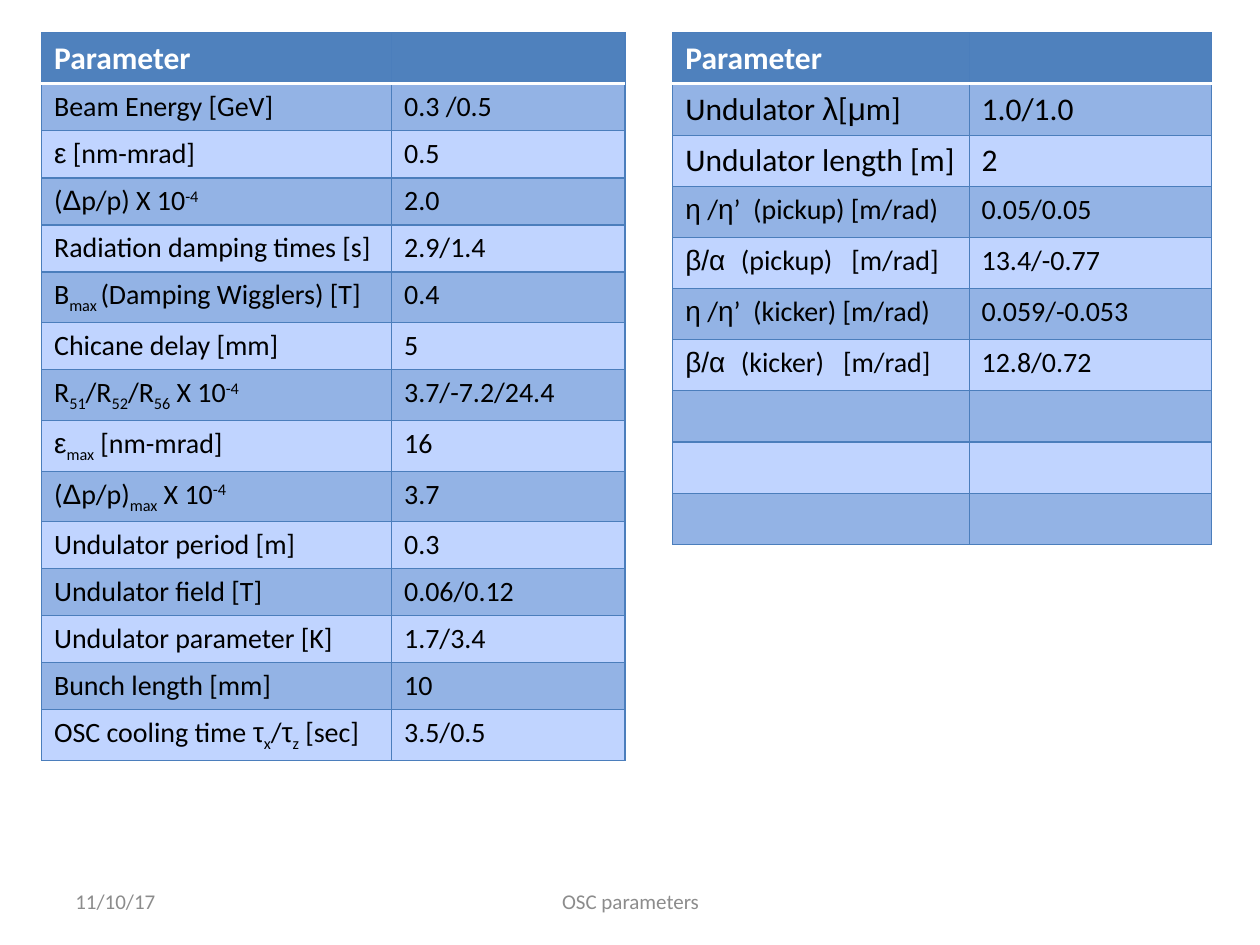
from itertools import groupby

from lxml.etree import SubElement
from pptx import Presentation
from pptx.dml.color import RGBColor
from pptx.enum.text import MSO_ANCHOR as Anchor, PP_ALIGN as Align
from pptx.oxml.ns import qn
from pptx.util import Inches, Pt

WIDTH, HEIGHT = Inches(10), Inches(7.5)
COLORS = {"header": "4F81BD", "dark": "93B3E5", "light": "C0D4FF", "line": "4B7EBC",
          "white": "FFFFFF", "text": "000000", "footer": "8C8C8C"}

# Inline marks toggle a style: _subscript_, ^superscript^, ~Greek face~.
BASELINES = {"_": "-25000", "^": "30000"}
MARKS = "_^~"

BEAM_ROWS = [
    ("Beam Energy [GeV]", "0.3 /0.5"),
    ("~ε~ [nm-mrad]", "0.5"),
    ("(~Δ~p/p) X 10^-4^", "2.0"),
    ("Radiation damping times [s]", "2.9/1.4"),
    ("B_max _(Damping Wigglers) [T]", "0.4"),
    ("Chicane delay [mm]", "5"),
    ("R_51_/R_52_/R_56_ X 10^-4^", "3.7/-7.2/24.4"),
    ("~ε~_max_ [nm-mrad]", "16"),
    ("(~Δ~p/p)_max_ X 10^-4^", "3.7"),
    ("Undulator period [m]", "0.3"),
    ("Undulator field [T]", "0.06/0.12"),
    ("Undulator parameter [K]", "1.7/3.4"),
    ("Bunch length [mm]", "10"),
    ("OSC cooling time ~τ~_x_/~τ~_z_ [sec]", "3.5/0.5"),
]
OPTICS_ROWS = [
    ("Undulator ~λ~[~μ~m]", "1.0/1.0"),
    ("Undulator length [m]", "2"),
    ("~η~ /~η~’  (pickup) [m/rad)", "0.05/0.05"),
    ("~β/α  ~(pickup)   [m/rad]", "13.4/-0.77"),
    ("~η~ /~η~’  (kicker) [m/rad)", "0.059/-0.053"),
    ("~β/α  ~(kicker)   [m/rad]", "12.8/0.72"),
    ("", ""), ("", ""), ("", ""),
]


def share_box(left, top, width, height):
    """Turn percentages of the slide's size into lengths."""
    return tuple(int(part * size / 100) for part, size in
                 zip((left, top, width, height), (WIDTH, HEIGHT) * 2))


def split_marks(text):
    """Split marked text into (mark, words) pieces."""
    mark, styled = "", []
    for letter in text:
        if letter in MARKS:
            mark = "" if mark == letter else letter
        else:
            styled.append((mark, letter))
    for key, group in groupby(styled, key=lambda pair: pair[0]):
        yield key, "".join(letter for _, letter in group)


def write_text(frame, text, size=18, color="text", bold=False, align=Align.LEFT):
    """Write marked text into the first paragraph of a frame."""
    para = frame.paragraphs[0]
    para.alignment = align
    para.font.size = Pt(size)
    for mark, words in split_marks(text):
        span = para.add_run()
        span.text = words
        span.font.name = "Arial" if mark == "~" else "Calibri"
        span.font.size, span.font.bold = Pt(size), bold
        span.font.color.rgb = RGBColor.from_string(COLORS[color])
        if mark in BASELINES:
            span.font._element.set("baseline", BASELINES[mark])


def add_borders(cell, **edges):
    """Draw the four edges of a cell; an edge given as (colour, points) differs."""
    properties = cell._tc.get_or_add_tcPr()
    for side in "LRTB":
        color, points = edges.get(side, ("line", 0.75))
        line = SubElement(properties, qn(f"a:ln{side}"), w=str(Pt(points)))
        fill = SubElement(line, qn("a:solidFill"))
        SubElement(fill, qn("a:srgbClr"), val=COLORS[color])


def add_parameter_table(page, box, first_share, rows, size_of):
    """Place a header and banded rows of parameters in a box."""
    left, top, width, height = box
    count = len(rows) + 1
    table = page.shapes.add_table(count, 2, *box).table
    table.columns[0].width = int(width * first_share)
    table.columns[1].width = width - table.columns[0].width
    for index, texts in enumerate([("Parameter", "")] + rows):
        table.rows[index].height = height // count
        header = index == 0
        edges = {"B": ("white", 2)} if header else {"T": ("white", 2)} if index == 1 else {}
        band = "header" if header else "dark" if index % 2 else "light"
        for column, text in enumerate(texts):
            cell = table.cell(index, column)
            add_borders(cell, **edges)
            cell.fill.solid()
            cell.fill.fore_color.rgb = RGBColor.from_string(COLORS[band])
            write_text(cell.text_frame, text, size=18 if header else size_of(index),
                       color="white" if header else "text", bold=header)


def add_footer(page, box, text, align):
    """Place one grey footer text in a box."""
    frame = page.shapes.add_textbox(*box).text_frame
    frame.word_wrap = True
    frame.vertical_anchor = Anchor.MIDDLE
    write_text(frame, text, size=12, color="footer", align=align)


def main():
    """Build the slide and save the deck."""
    deck = Presentation()
    deck.slide_width, deck.slide_height = WIDTH, HEIGHT
    page = deck.slides.add_slide(deck.slide_layouts[6])
    add_parameter_table(page, share_box(3.3, 3.47, 46.3, 74.67), 0.6, BEAM_ROWS,
                        lambda index: 16)
    add_parameter_table(page, share_box(53.4, 3.47, 42.75, 54.13), 0.55, OPTICS_ROWS,
                        lambda index: 16 if 3 <= index <= 6 else 18)
    add_footer(page, share_box(5, 92.67, 23.3, 5.33), "11/10/17", Align.LEFT)
    add_footer(page, share_box(34.2, 92.67, 31.7, 5.33), "OSC parameters", Align.CENTER)
    deck.save("out.pptx")


if __name__ == "__main__":
    main()
